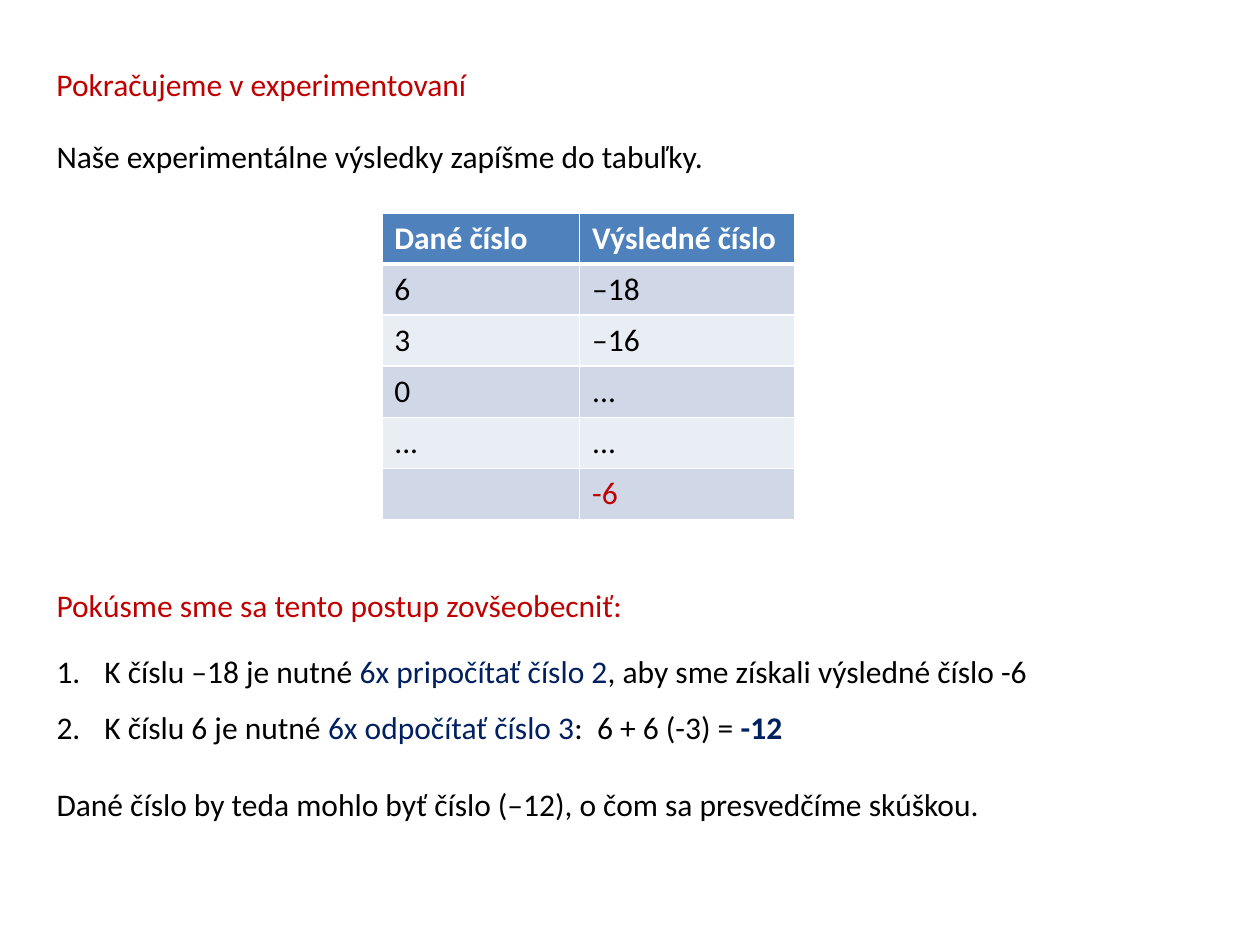
from dataclasses import dataclass

from lxml import etree
from pptx import Presentation
from pptx.dml.color import RGBColor
from pptx.enum.text import MSO_AUTO_SIZE
from pptx.oxml.ns import qn
from pptx.util import Inches, Pt

FIT_SHAPE = MSO_AUTO_SIZE.SHAPE_TO_FIT_TEXT
WHITE = RGBColor(0xFF, 0xFF, 0xFF)
BLACK = RGBColor(0, 0, 0)
RED = RGBColor(0xC0, 0, 0)
NAVY = RGBColor(0, 0x20, 0x60)
HEADER = RGBColor(0x4F, 0x81, 0xBD)
BANDS = (RGBColor(0xD0, 0xD8, 0xE8), RGBColor(0xE9, 0xED, 0xF4))
FONT = "Calibri"
SIZE = Pt(18)


@dataclass
class Run:
    text: str
    color: RGBColor = BLACK
    bold: bool = False


@dataclass
class Para:
    runs: list[Run]
    before: int = 0
    spacing: float = 1.0
    numbered: bool = False


@dataclass
class Box:
    left: float
    top: float
    width: float
    height: float
    paras: list[Para]


ROWS = [
    ("Dané číslo", "Výsledné číslo"),
    ("6", "–18"),
    ("3", "–16"),
    ("0", "..."),
    ("...", "..."),
    ("", "-6"),
]
COLUMN_WIDTHS = (1.57, 1.71)
ROW_HEIGHT = 0.405

BOXES = [
    Box(0.35, 0.47, 6.93, 0.4, [Para([Run("Pokračujeme v experimentovaní", RED)])]),
    Box(0.35, 1.04, 8.45, 0.4,
        [Para([Run("Naše experimentálne výsledky zapíšme do tabuľky.")])]),
    Box(0.35, 4.54, 8.45, 2.06, [
        Para([Run("Pokúsme sme sa tento postup zovšeobecniť:", RED)], 6, 1.2),
        Para([Run("K číslu –18 je nutné "),
              Run("6x pripočítať číslo 2", NAVY),
              Run(", aby sme získali výsledné číslo -6")], 12, 1.2, True),
        Para([Run("K číslu 6 je nutné "),
              Run("6x odpočítať číslo 3", NAVY),
              Run(":  6 + 6 (-3) = "),
              Run("-12", NAVY, True)], 6, 1.2, True),
        Para([Run("Dané číslo by teda mohlo byť číslo (–12), "
                  "o čom sa presvedčíme skúškou.")], 18, 1.2),
    ]),
]


def add_number(p) -> None:
    pPr = p._p.get_or_add_pPr()
    pPr.set("marL", str(Inches(0.38)))
    pPr.set("indent", str(-Inches(0.38)))
    number = etree.Element(qn("a:buAutoNum"), type="arabicPeriod")
    pPr.find(qn("a:defRPr")).addprevious(number)


def add_text(s, box: Box) -> None:
    sp = s.shapes.add_textbox(Inches(box.left), Inches(box.top),
                              Inches(box.width), Inches(box.height))
    tf = sp.text_frame
    tf.word_wrap = True
    tf.auto_size = FIT_SHAPE
    for i, para in enumerate(box.paras):
        p = tf.add_paragraph() if i else tf.paragraphs[0]
        p.space_before = Pt(para.before)
        p.line_spacing = para.spacing
        p.font.name = FONT
        p.font.size = SIZE
        if para.numbered:
            add_number(p)
        for run in para.runs:
            r = p.add_run()
            r.text = run.text
            r.font.color.rgb = run.color
            r.font.bold = run.bold


def set_borders(cell, widths: dict[str, int]) -> None:
    tcPr = cell._tc.get_or_add_tcPr()
    for i, (side, width) in enumerate(widths.items()):
        ln = etree.Element(qn(f"a:ln{side}"), w=str(Pt(width)))
        fill = etree.SubElement(ln, qn("a:solidFill"))
        etree.SubElement(fill, qn("a:srgbClr"), val=str(WHITE))
        tcPr.insert(i, ln)


def add_results(s, left: float, top: float) -> None:
    table = s.shapes.add_table(
        len(ROWS), len(COLUMN_WIDTHS), Inches(left), Inches(top),
        Inches(sum(COLUMN_WIDTHS)), Inches(ROW_HEIGHT * len(ROWS))).table
    for column, width in zip(table.columns, COLUMN_WIDTHS):
        column.width = Inches(width)
    for i, row in enumerate(ROWS):
        for j, text in enumerate(row):
            cell = table.cell(i, j)
            cell.fill.solid()
            cell.fill.fore_color.rgb = BANDS[(i - 1) % 2] if i else HEADER
            set_borders(cell, {"L": 1, "R": 1, "T": 3 if i == 1 else 1,
                               "B": 1 if i else 3})
            p = cell.text_frame.paragraphs[0]
            if text:
                p.text = text
            p.font.name = FONT
            p.font.size = SIZE
            p.font.bold = i == 0
            p.font.color.rgb = WHITE if i == 0 else RED if text == "-6" else BLACK


def main() -> None:
    prs = Presentation()
    prs.slide_width = Inches(10)
    prs.slide_height = Inches(7.5)
    s = prs.slides.add_slide(prs.slide_layouts[6])
    add_results(s, 3.03, 1.69)
    for box in BOXES:
        add_text(s, box)
    prs.save("out.pptx")


if __name__ == "__main__":
    main()
